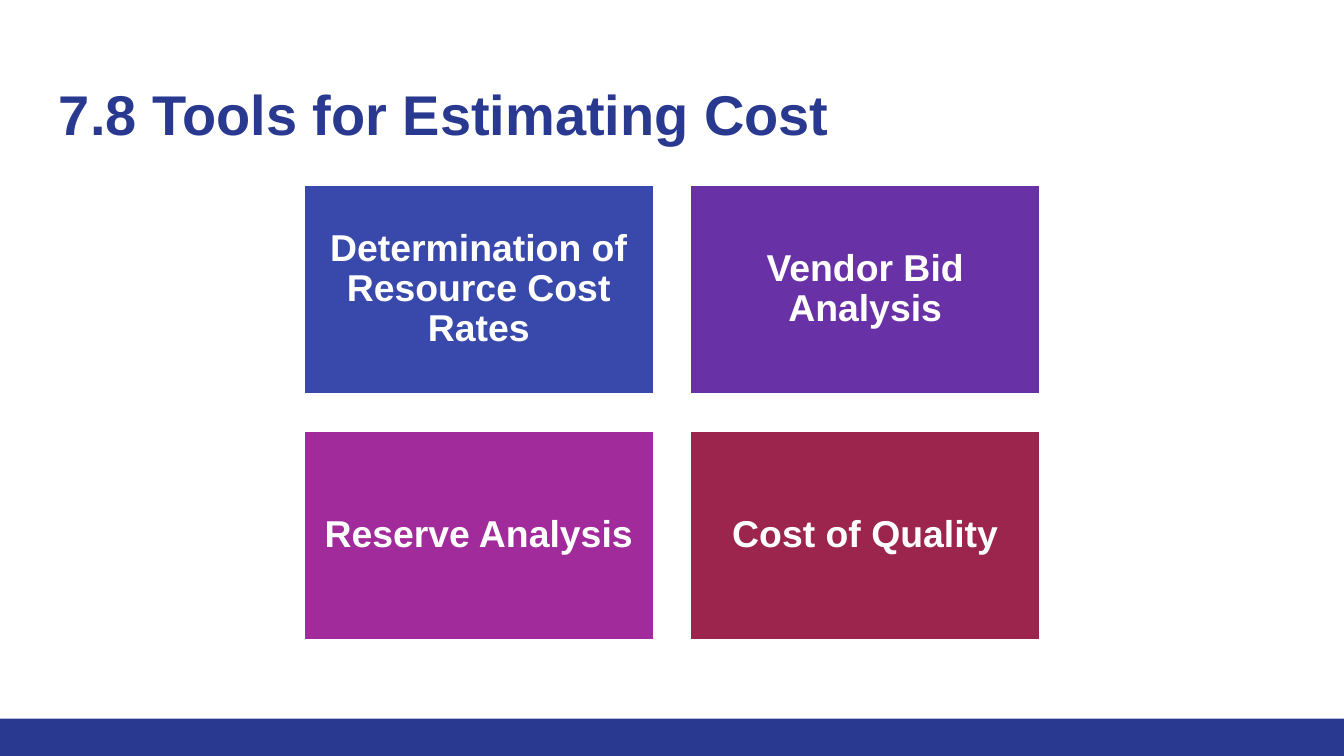
import pptx
import pptx.dml.color
import pptx.enum.shapes
import pptx.enum.text
import pptx.util
from dataclasses import dataclass

Pt = pptx.util.Pt
Align = pptx.enum.text.PP_ALIGN
Anchor = pptx.enum.text.MSO_ANCHOR


@dataclass(frozen=True)
class Theme:
    font: str = "Arial"
    navy: str = "2A3990"
    white: str = "FFFFFF"
    tiles: tuple = ("3949AB", "6832A6", "A12B9A", "9C254D")
    title: int = 30
    label: int = 20


THEME = Theme()
WIDE, HIGH = 720, 405


def color(code):
    return pptx.dml.color.RGBColor.from_string(code)


def write(shape, text, size, ink, align=Align.LEFT, anchor=Anchor.TOP,
          inset=(7.2, 7.2, 7.2, 7.2), lines=1.0):
    """Put bold text in a shape; inset is left, top, right, bottom."""
    frame = shape.text_frame
    frame.word_wrap = True
    frame.vertical_anchor = anchor
    frame.margin_left, frame.margin_top, frame.margin_right, frame.margin_bottom = map(Pt, inset)
    para = frame.paragraphs[0]
    para.alignment = align
    para.line_spacing = lines
    run = para.add_run()
    run.text = text
    run.font.name = THEME.font
    run.font.size = Pt(size)
    run.font.bold = True
    run.font.color.rgb = color(ink)


def block(slide, box, fill, edge=None):
    """Add a filled rectangle, with a 2 pt border if edge is given."""
    shape = slide.shapes.add_shape(pptx.enum.shapes.MSO_SHAPE.RECTANGLE, *map(Pt, box))
    shape.shadow.inherit = False
    shape.fill.solid()
    shape.fill.fore_color.rgb = color(fill)
    if edge:
        shape.line.color.rgb = color(edge)
        shape.line.width = Pt(2)
    else:
        shape.line.fill.background()
    return shape


def header(slide, box, text):
    shape = slide.shapes.add_textbox(*map(Pt, box))
    write(shape, text, THEME.title, THEME.navy, inset=(7.2, 10, 7.2, 7.2))


def grid(slide, box, labels, cols=2, gap=18.8):
    """Fill the box with equal tiles, row by row."""
    left, top, width, height = box
    rows = -(-len(labels) // cols)
    wide = (width - gap * (cols - 1)) / cols
    high = (height - gap * (rows - 1)) / rows
    for i, (label, fill) in enumerate(zip(labels, THEME.tiles)):
        row, col = divmod(i, cols)
        place = (left + col * (wide + gap), top + row * (high + gap), wide, high)
        tile = block(slide, place, fill, THEME.white)
        write(tile, label, THEME.label, THEME.white, align=Align.CENTER,
              anchor=Anchor.MIDDLE, inset=(6, 6, 6, 6), lines=0.9)


def main():
    deck = pptx.Presentation()
    deck.slide_width, deck.slide_height = Pt(WIDE), Pt(HIGH)
    slide = deck.slides.add_slide(deck.slide_layouts[6])
    block(slide, (0, HIGH - 20, WIDE, 20), THEME.navy)
    header(slide, (24.5, 32.4, 671, 47.5), "7.8 Tools for Estimating Cost")
    grid(slide, (162.4, 98.6, 395.2, 244.6), (
        "Determination of Resource Cost Rates",
        "Vendor Bid Analysis",
        "Reserve Analysis",
        "Cost of Quality",
    ))
    deck.save("out.pptx")


if __name__ == "__main__":
    main()
